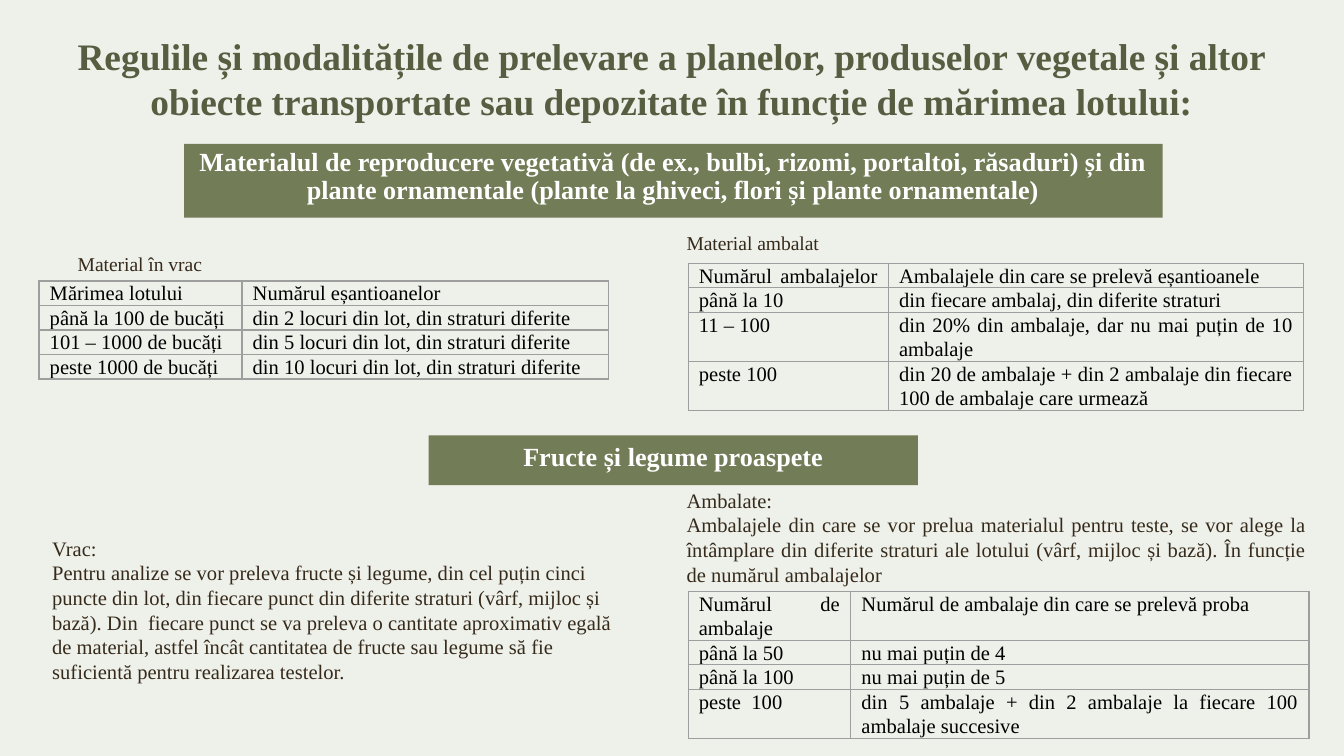
from pptx import Presentation
from pptx.dml.color import RGBColor
from pptx.enum.shapes import MSO_SHAPE as Shape
from pptx.enum.text import MSO_ANCHOR as Anchor, MSO_AUTO_SIZE as AutoSize, PP_ALIGN as Align
from pptx.oxml import parse_xml
from pptx.oxml.ns import nsdecls
from pptx.util import Inches, Pt

BACKGROUND = RGBColor(0xEE, 0xF0, 0xEA)
OLIVE = RGBColor(0x72, 0x7C, 0x57)
DARK_OLIVE = RGBColor(0x56, 0x5D, 0x41)
BROWN = RGBColor(0x36, 0x2A, 0x1B)
BLACK = RGBColor(0, 0, 0)
WHITE = RGBColor(0xFF, 0xFF, 0xFF)
BORDER = RGBColor(0x9E, 0x9E, 0x9E)


def write(para, text, size, color, align=Align.LEFT, bold=False, spacing=1.0):
    para.alignment = align
    para.line_spacing = spacing
    para.space_before = Pt(0)
    span = para.add_run()
    span.text = text
    span.font.name = "Times New Roman"
    span.font.size = Pt(size)
    span.font.bold = bold
    span.font.color.rgb = color


def set_frame(frame, anchor, vertical_inset):
    frame.word_wrap = True
    frame.auto_size = AutoSize.NONE
    frame.vertical_anchor = anchor
    frame.margin_left = frame.margin_right = Inches(0.1)
    frame.margin_top = frame.margin_bottom = Inches(vertical_inset)


deck = Presentation()
deck.slide_width, deck.slide_height = Inches(10), Inches(10 * 9 / 16)
page = deck.slides.add_slide(deck.slide_layouts[0])
page.background.fill.solid()
page.background.fill.fore_color.rgb = BACKGROUND

title, subtitle = page.placeholders
title.left, title.top, title.width, title.height = (
    Inches(0.19), Inches(0.15), Inches(9.62), Inches(0.8))
set_frame(title.text_frame, Anchor.TOP, 0.1)
write(title.text_frame.paragraphs[0],
      "Regulile și modalitățile de prelevare a planelor, produselor vegetale și altor "
      "obiecte transportate sau depozitate în funcție de mărimea lotului:",
      20, DARK_OLIVE, Align.CENTER, True)

subtitle.left, subtitle.top, subtitle.width, subtitle.height = (
    Inches(1.37), Inches(1.07), Inches(7.28), Inches(0.55))
produce_banner = page.shapes.add_shape(
    Shape.RECTANGLE, Inches(3.19), Inches(3.24), Inches(3.64), Inches(0.37))
produce_banner.shadow.inherit = False
banners = [
    (subtitle, "Materialul de reproducere vegetativă (de ex., bulbi, rizomi, portaltoi, răsaduri) "
     "și din plante ornamentale (plante la ghiveci, flori și plante ornamentale)"),
    (produce_banner, "Fructe și legume proaspete"),
]
for banner, text in banners:
    banner.fill.solid()
    banner.fill.fore_color.rgb = OLIVE
    banner.line.fill.background()
    set_frame(banner.text_frame, Anchor.BOTTOM, 0.1)
    write(banner.text_frame.paragraphs[0], text, 14, WHITE, Align.CENTER, True, Pt(15))

notes = [
    (0.48, 1.81, 4.51, 0.31, 10.5, [("Material în vrac", Align.LEFT)]),
    (5.01, 1.65, 4.51, 0.31, 10.5, [("Material ambalat", Align.LEFT)]),
    (0.29, 3.88, 4.46, 1.31, 11, [
        ("Vrac:", Align.LEFT),
        ("Pentru analize se vor preleva fructe și legume, din cel puțin cinci puncte din lot, "
         "din fiecare punct din diferite straturi (vârf, mijloc și bază). Din  fiecare punct se "
         "va preleva o cantitate aproximativ egală de material, astfel încât cantitatea de "
         "fructe sau legume să fie suficientă pentru realizarea testelor.", Align.LEFT)]),
    (5.01, 3.38, 4.81, 1.23, 11, [
        ("Ambalate:", Align.LEFT),
        ("Ambalajele din care se vor prelua materialul pentru teste, se vor alege la întâmplare "
         "din diferite straturi ale lotului (vârf, mijloc și bază). În funcție de numărul "
         "ambalajelor", Align.JUSTIFY)]),
]
for left, top, width, height, size, paragraphs in notes:
    box = page.shapes.add_textbox(Inches(left), Inches(top), Inches(width), Inches(height))
    set_frame(box.text_frame, Anchor.MIDDLE, 0.05)
    for index, (text, align) in enumerate(paragraphs):
        para = box.text_frame.add_paragraph() if index else box.text_frame.paragraphs[0]
        write(para, text, size, BROWN, align)

tables = [
    (5.12, 4.4, (1.21, 3.41), (2, 1, 1, 2), [
        ("Numărul de ambalaje", "Numărul de ambalaje din care se prelevă proba"),
        ("până la 50", "nu mai puțin de 4"),
        ("până la 100", "nu mai puțin de 5"),
        ("peste  100", "din 5 ambalaje + din 2 ambalaje la fiecare 100 ambalaje succesive")]),
    (0.29, 2.09, (1.51, 2.73), (1, 1, 1, 1), [
        ("Mărimea lotului ", "Numărul eșantioanelor"),
        ("până la 100 de bucăți", "din 2 locuri din lot, din straturi diferite"),
        ("101 – 1000 de bucăți", "din 5 locuri din lot, din straturi diferite"),
        ("peste 1000 de bucăți", "din 10 locuri din lot, din straturi diferite")]),
    (5.12, 1.96, (1.49, 3.09), (1, 1, 2, 2), [
        ("Numărul ambalajelor ", "Ambalajele din care se prelevă eșantioanele"),
        ("până la 10", "din fiecare ambalaj, din diferite straturi"),
        ("11 – 100", "din 20% din ambalaje, dar nu mai puțin de 10 ambalaje "),
        ("peste 100", "din 20 de ambalaje + din 2 ambalaje din fiecare 100 de ambalaje "
         "care urmează")]),
]
for left, top, widths, line_counts, rows in tables:
    table = page.shapes.add_table(
        len(rows), len(widths), Inches(left), Inches(top),
        Inches(sum(widths)), Inches(0.18 * sum(line_counts))).table
    table.first_row = table.horz_banding = False
    for column, width in zip(table.columns, widths):
        column.width = Inches(width)
    for row, lines, texts in zip(table.rows, line_counts, rows):
        row.height = Inches(0.18 * lines)
        for cell, text in zip(row.cells, texts):
            cell.margin_left = cell.margin_right = Inches(0.08)
            cell.margin_top = cell.margin_bottom = 0
            para = cell.text_frame.paragraphs[0]
            write(para, text, 11, BLACK, Align.JUSTIFY, spacing=1.07)
            para.space_after = Pt(8)
            properties = cell._tc.get_or_add_tcPr()
            for side in ("lnL", "lnR", "lnT", "lnB"):
                properties.append(parse_xml(
                    f'<a:{side} {nsdecls("a")} w="{Pt(0.75)}"><a:solidFill>'
                    f'<a:srgbClr val="{BORDER}"/></a:solidFill></a:{side}>'))
            cell.fill.background()

deck.save("out.pptx")
